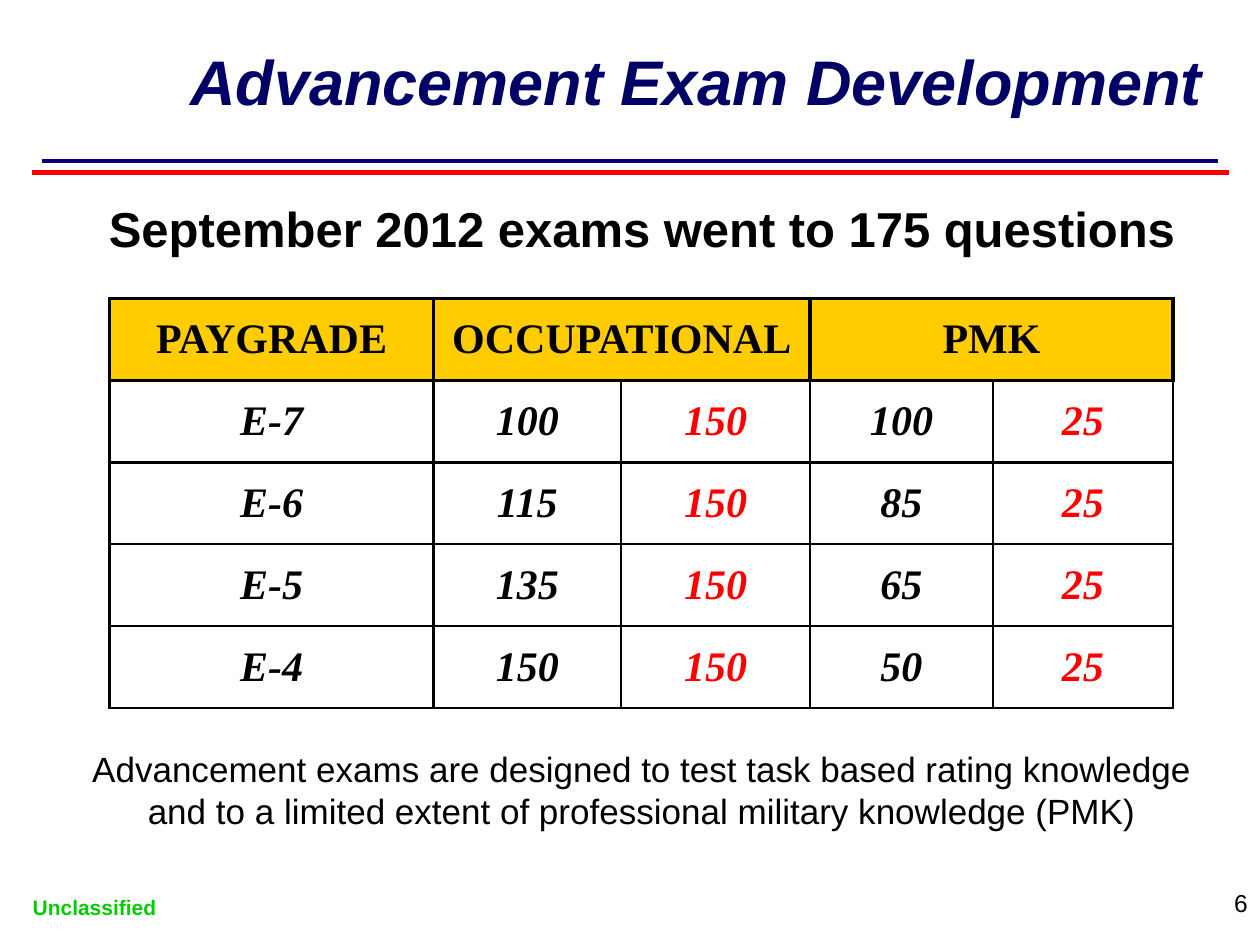
from dataclasses import dataclass

from lxml import etree
from pptx import Presentation
from pptx import util as u
from pptx.dml.color import RGBColor
from pptx.enum import shapes, text
from pptx.oxml import ns


@dataclass(frozen=True)
class Theme:
    sans: str = "Arial"
    serif: str = "Times New Roman"
    black: str = "000000"
    white: str = "FFFFFF"
    red: str = "FF0000"
    navy: str = "000080"
    title_blue: str = "000066"
    gold: str = "FFCC00"
    green: str = "00CC00"
    title_size: int = 36
    heading_size: int = 28
    table_size: int = 24
    note_size: int = 20
    page_size: int = 14
    label_size: int = 12
    rule_width: float = 2.5
    header_border: float = 2.25
    body_border: float = 1.5


class SlideWriter:
    def __init__(self, slide, theme):
        self.slide = slide
        self.theme = theme

    def rule(self, left, right, top, color):
        line = self.slide.shapes.add_connector(
            shapes.MSO_CONNECTOR.STRAIGHT,
            u.Inches(left), u.Inches(top), u.Inches(right), u.Inches(top))
        line.line.color.rgb = RGBColor.from_string(color)
        line.line.width = u.Pt(self.theme.rule_width)
        etree.SubElement(line._element.spPr, ns.qn("a:effectLst"))

    def span(self, para, words, size, color, font=None, bold=False, italic=False):
        span = para.add_run()
        span.text = words
        span.font.name = font or self.theme.sans
        span.font.size = u.Pt(size)
        span.font.color.rgb = RGBColor.from_string(color)
        span.font.bold = bold
        span.font.italic = italic

    def box(self, left, top, width, height, align, wrap=True, anchor=text.MSO_ANCHOR.TOP):
        box = self.slide.shapes.add_textbox(
            u.Inches(left), u.Inches(top), u.Inches(width), u.Inches(height))
        frame = box.text_frame
        frame.word_wrap = wrap
        frame.vertical_anchor = anchor
        frame.paragraphs[0].alignment = align
        return frame

    def borders(self, cell, widths):
        properties = cell._tc.get_or_add_tcPr()
        for position, (side, width) in enumerate(widths.items()):
            line = etree.Element(ns.qn(f"a:ln{side}"), w=str(u.Pt(width)))
            fill = etree.SubElement(line, ns.qn("a:solidFill"))
            etree.SubElement(fill, ns.qn("a:srgbClr"), val=self.theme.black)
            properties.insert(position, line)

    def cell(self, cell, words, fill, color, italic):
        cell.fill.solid()
        cell.fill.fore_color.rgb = RGBColor.from_string(fill)
        cell.vertical_anchor = text.MSO_ANCHOR.MIDDLE
        para = cell.text_frame.paragraphs[0]
        para.alignment = text.PP_ALIGN.CENTER
        if words:
            self.span(para, words, self.theme.table_size, color,
                      self.theme.serif, bold=True, italic=italic)

    def table(self, left, top, widths, row_height, rows, red_columns):
        theme = self.theme
        table = self.slide.shapes.add_table(
            len(rows), len(widths), u.Inches(left), u.Inches(top),
            u.Inches(sum(widths)), u.Inches(row_height * len(rows))).table
        for column, width in zip(table.columns, widths):
            column.width = u.Inches(width)
        for row_index, row in enumerate(rows):
            table.rows[row_index].height = u.Inches(row_height)
            header = row_index == 0
            top_border = theme.header_border if row_index < 2 else theme.body_border
            border = theme.header_border if header else theme.body_border
            for column_index, words in enumerate(row):
                cell = table.cell(row_index, column_index)
                red = not header and column_index in red_columns
                self.cell(cell, words, theme.gold if header else theme.white,
                          theme.red if red else theme.black, italic=not header)
                self.borders(cell, {"L": border, "R": border, "T": top_border, "B": border})
        for start in (1, 3):
            table.cell(0, start).merge(table.cell(0, start + 1))


def main():
    theme = Theme()
    align = text.PP_ALIGN
    deck = Presentation()
    deck.slide_width, deck.slide_height = u.Inches(10), u.Inches(7.5)
    page = SlideWriter(deck.slides.add_slide(deck.slide_layouts[6]), theme)

    page.rule(0.33, 9.67, 1.28, theme.navy)
    page.rule(0.25, 9.75, 1.37, theme.red)

    title = page.box(0.42, 0.05, 9.22, 1.17, align.RIGHT, anchor=text.MSO_ANCHOR.MIDDLE)
    page.span(title.paragraphs[0], "Advancement Exam Development",
              theme.title_size, theme.title_blue, bold=True, italic=True)

    body = page.box(0.43, 1.53, 9.33, 5.52, align.CENTER)
    page.span(body.paragraphs[0], "September 2012 exams went to 175 questions",
              theme.heading_size, theme.black, bold=True)
    note = body.add_paragraph()
    note.alignment = align.CENTER
    note.space_before = u.Pt(280)
    page.span(note, "Advancement exams are designed to test task based rating knowledge "
              "and to a limited extent of professional military knowledge (PMK)",
              theme.note_size, theme.black)

    label = page.box(0.16, 7.05, 1.18, 0.3, align.RIGHT, wrap=False)
    page.span(label.paragraphs[0], "Unclassified", theme.label_size, theme.green, bold=True)

    number = page.box(7.92, 7, 2.08, 0.5, align.RIGHT)
    page.span(number.paragraphs[0], "6", theme.page_size, theme.black)

    rows = [
        ("PAYGRADE", "OCCUPATIONAL", "", "PMK", ""),
        ("E-7", "100", "150", "100", "25"),
        ("E-6", "115", "150", "85", "25"),
        ("E-5", "135", "150", "65", "25"),
        ("E-4", "150", "150", "50", "25"),
    ]
    page.table(0.87, 2.37, (2.57, 1.49, 1.5, 1.45, 1.43), 0.65, rows, red_columns=(2, 4))

    deck.save("out.pptx")


if __name__ == "__main__":
    main()
